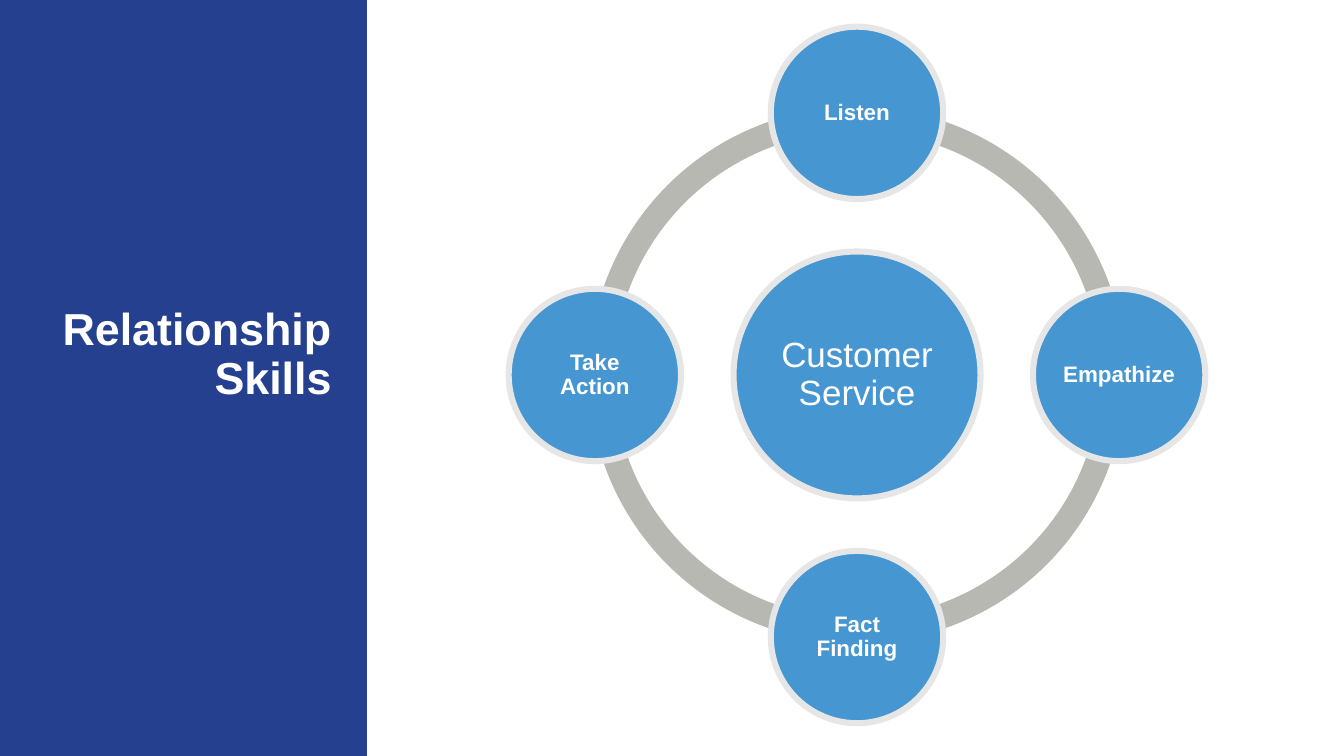
import math

from pptx import Presentation
from pptx.dml.color import RGBColor
from pptx.enum.shapes import MSO_SHAPE
from pptx.enum.text import MSO_ANCHOR, MSO_AUTO_SIZE, PP_ALIGN
from pptx.util import Inches, Pt

RECTANGLE = MSO_SHAPE.RECTANGLE
ELLIPSE = MSO_SHAPE.OVAL
BLOCK_ARC = MSO_SHAPE.BLOCK_ARC
CENTER, RIGHT = PP_ALIGN.CENTER, PP_ALIGN.RIGHT
MIDDLE = MSO_ANCHOR.MIDDLE
GROW = MSO_AUTO_SIZE.SHAPE_TO_FIT_TEXT

NAVY, BLUE, WHITE = "25408F", "4696D2", "FFFFFF"
RING_GREY, OUTLINE_GREY = "B7B8B2", "E7E6E6"

CENTER_X, CENTER_Y = 8.5, 3.72
RING_DIAMETER, RING_THICKNESS = 5.32, 0.046
ORBIT_RADIUS = 2.6
HUB_DIAMETER, SKILL_DIAMETER = 2.45, 1.71
SKILLS = ["Listen", "Empathize", "Fact Finding", "Take Action"]


def color(hex_string):
    return RGBColor.from_string(hex_string)


class SlideBuilder:
    """Holds the text style and the slide being built."""

    font_name = "Arial"
    outline_width = 4.33

    def __init__(self, slide):
        self.slide = slide

    def shape(self, kind, left, top, width, height, fill, line=None):
        shape = self.slide.shapes.add_shape(
            kind, Inches(left), Inches(top), Inches(width), Inches(height))
        shape.shadow.inherit = False
        shape.fill.solid()
        shape.fill.fore_color.rgb = color(fill)
        if line:
            shape.line.color.rgb = color(line)
            shape.line.width = Pt(self.outline_width)
        else:
            shape.line.fill.background()
        return shape

    def set_text(self, shape, text, size, bold, alignment, margins):
        """Set and format text; margins are (horizontal, vertical) inches."""
        frame = shape.text_frame
        horizontal, vertical = map(Inches, margins)
        frame_format = {
            "text": text, "word_wrap": True, "vertical_anchor": MIDDLE,
            "margin_left": horizontal, "margin_right": horizontal,
            "margin_top": vertical, "margin_bottom": vertical,
        }
        for name, value in frame_format.items():
            setattr(frame, name, value)
        paragraph = frame.paragraphs[0]
        paragraph.alignment = alignment
        paragraph.line_spacing = 0.9
        font = paragraph.runs[0].font
        font_format = {"name": self.font_name, "size": Pt(size), "bold": bold}
        for name, value in font_format.items():
            setattr(font, name, value)
        font.color.rgb = color(WHITE)

    def title(self, text, left, top, width, height):
        title = self.slide.shapes.title
        place = {"left": left, "top": top, "width": width, "height": height}
        for name, value in place.items():
            setattr(title, name, Inches(value))
        self.set_text(title, text, 32, True, RIGHT, (0.1, 0.05))
        title.text_frame.auto_size = GROW

    def side_panel(self, width, height):
        """Draw the coloured panel behind the title."""
        panel = self.shape(RECTANGLE, 0, 0, width, height, NAVY)
        self.slide.shapes.title.element.addprevious(panel.element)

    def ring_quarter(self, start_degrees):
        """Draw a clockwise quarter of the ring."""
        arc = self.shape(BLOCK_ARC, CENTER_X - RING_DIAMETER / 2,
                         CENTER_Y - RING_DIAMETER / 2,
                         RING_DIAMETER, RING_DIAMETER, RING_GREY)
        # Angles are stored in 1/60000 degree, adjustments in 1/100000.
        end_degrees = (start_degrees + 90) % 360
        arc.adjustments[0] = start_degrees * 0.6
        arc.adjustments[1] = end_degrees * 0.6
        arc.adjustments[2] = RING_THICKNESS

    def circle(self, text, x, y, diameter, size, bold, margin):
        """Draw a labelled circle centred on x, y."""
        circle = self.shape(ELLIPSE, x - diameter / 2, y - diameter / 2,
                            diameter, diameter, BLUE, OUTLINE_GREY)
        self.set_text(circle, text, size, bold, CENTER, (margin, margin))


def main():
    presentation = Presentation()
    presentation.slide_width = Inches(13.33)
    presentation.slide_height = Inches(7.5)
    title_only = presentation.slide_layouts[5]
    builder = SlideBuilder(presentation.slides.add_slide(title_only))

    builder.side_panel(3.64, 7.5)
    builder.title("Relationship Skills", 0.25, 2.99, 3.14, 1.07)

    for start_degrees in range(0, 360, 90):
        builder.ring_quarter(start_degrees)
    builder.circle("Customer Service", CENTER_X, CENTER_Y, HUB_DIAMETER,
                   25, False, 0.03)
    for index, skill in enumerate(SKILLS):
        angle = math.tau * index / len(SKILLS)
        builder.circle(skill, CENTER_X + ORBIT_RADIUS * math.sin(angle),
                       CENTER_Y - ORBIT_RADIUS * math.cos(angle),
                       SKILL_DIAMETER, 16, True, 0.02)

    presentation.save("out.pptx")


if __name__ == "__main__":
    main()
